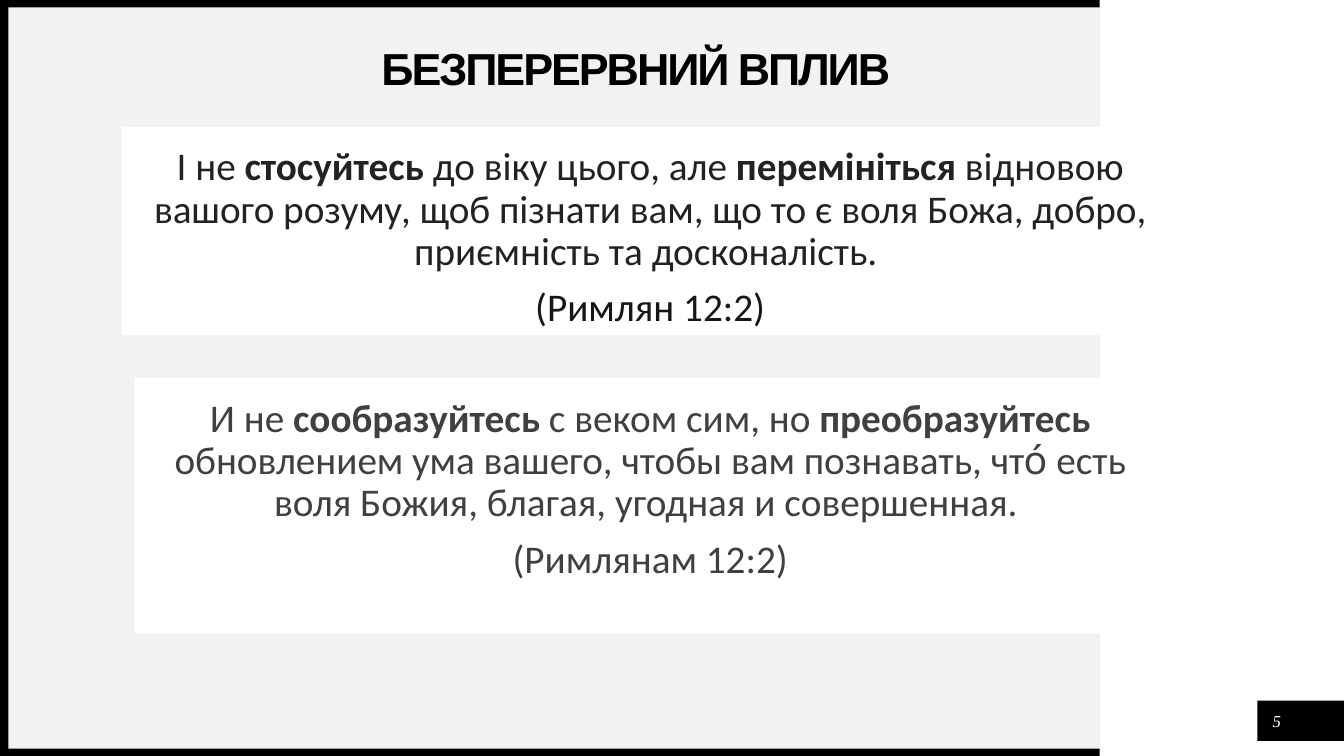
import pptx
import pptx.dml.color
import pptx.enum.shapes
import pptx.enum.text
import pptx.oxml
import pptx.oxml.ns
import pptx.util

# The slide is a grid of 160 columns by 90 rows
CELL = pptx.util.Inches(1 / 12)
COLUMNS, ROWS = 160, 90
PANEL_RIGHT = 130.9
BAR = 0.88

ALIGN = pptx.enum.text.PP_ALIGN
ANCHOR = pptx.enum.text.MSO_ANCHOR

# Each verse: paragraphs of (text, bold, colour) runs
UKRAINIAN_VERSE = [
    [("І не ", False, "222222"),
     ("стосуйтесь", True, "222222"),
     (" до віку цього, але ", False, "222222"),
     ("перемініться", True, "222222"),
     (" відновою вашого розуму, щоб пізнати вам, що то є воля Божа, "
      "добро, приємність та досконалість. ", False, "222222")],
    [("(Римлян 12:2)", False, "161616")],
]
RUSSIAN_VERSE = [
    [("И не ", False, "404040"),
     ("сообразуйтесь", True, "404040"),
     (" с веком сим, но ", False, "404040"),
     ("преобразуйтесь", True, "404040"),
     (" обновлением ума вашего, чтобы вам познавать, что́ есть "
      "воля Божия, благая, угодная и совершенная. ", False, "404040")],
    [("(Римлянам 12:2)", False, "404040")],
]


def cells(*counts):
    return [round(count * CELL) for count in counts]


def paint(target, colour):
    """Give a fill or a font a solid colour."""
    if hasattr(target, "solid"):
        target.solid()
        target = target.fore_color
    else:
        target = target.color
    target.rgb = pptx.dml.color.RGBColor.from_string(colour)


def add_block(page, area, colour):
    block = page.shapes.add_shape(
        pptx.enum.shapes.MSO_SHAPE.RECTANGLE, *cells(*area))
    block.shadow.inherit = False
    paint(block.fill, colour)
    block.line.fill.background()


def place(page, box, area):
    """Move a placeholder to its area, in front of the blocks."""
    box.left, box.top, box.width, box.height = cells(*area)
    page.shapes._spTree.append(box._element)


def set_frame(box, insets=(0, 0, 0, 0), anchor=ANCHOR.TOP):
    frame = box.text_frame
    frame.word_wrap = True
    frame.auto_size = pptx.enum.text.MSO_AUTO_SIZE.NONE
    frame.vertical_anchor = anchor
    (frame.margin_left, frame.margin_top,
     frame.margin_right, frame.margin_bottom) = cells(*insets)
    return frame


def center_para(para, line_spacing=None, before=0):
    para.alignment = ALIGN.CENTER
    para.line_spacing = line_spacing
    para.space_before = pptx.util.Pt(before)
    para.space_after = pptx.util.Pt(0)


def add_span(para, text, font, size, colour, bold=False, italic=False, spacing=0):
    span = para.add_run()
    span.text = text
    span.font.name = font
    span.font.size = pptx.util.Pt(size)
    span.font.bold = bold
    span.font.italic = italic
    paint(span.font, colour)
    if spacing:
        span.font._element.set("spc", str(round(spacing * 100)))


def remove_bullet(para):
    properties = para._p.get_or_add_pPr()
    properties.set("marL", "0")
    properties.set("indent", "0")
    properties.append(pptx.oxml.parse_xml(
        "<a:buNone %s/>" % pptx.oxml.ns.nsdecls("a")))


def write_verse(box, verse):
    paint(box.fill, "FFFFFF")
    frame = set_frame(box, (2.4, 2.4, 2.4, 0))
    for number, spans in enumerate(verse):
        para = frame.add_paragraph() if number else frame.paragraphs[0]
        center_para(para, 0.9, 10)
        remove_bullet(para)
        for text, bold, colour in spans:
            add_span(para, text, "Calibri", 28, colour, bold)


def main():
    deck = pptx.Presentation()
    deck.slide_width, deck.slide_height = cells(COLUMNS, ROWS)
    page = deck.slides.add_slide(deck.slide_layouts[1])

    # Grey panel, black frame bars and page number block
    add_block(page, (1, BAR, 130, ROWS - 2 * BAR), "F2F2F2")
    add_block(page, (149.7, 83.4, 10.3, 4.8), "000000")
    for top in (0, ROWS - BAR):
        add_block(page, (0, top, PANEL_RIGHT, BAR), "000000")
    add_block(page, (0, 0, 1, ROWS), "000000")

    # Title
    title = page.shapes.title
    place(page, title, (2.5, 5.6, 146.4, 5.6))
    para = set_frame(title, anchor=ANCHOR.MIDDLE).paragraphs[0]
    center_para(para, 0.9)
    add_span(para, "БЕЗПЕРЕРВНИЙ ВПЛИВ", "Arial", 32, "000000", True, spacing=-1.5)

    # Verses
    body = page.placeholders[1]
    place(page, body, (14.5, 15.1, 125.8, 24.8))
    write_verse(body, UKRAINIAN_VERSE)
    write_verse(page.shapes.add_textbox(*cells(16, 45, 122.8, 30.4)), RUSSIAN_VERSE)

    # Page number
    number_box = page.shapes.add_textbox(*cells(150.2, 84, 3.6, 3.6))
    para = set_frame(number_box, anchor=ANCHOR.MIDDLE).paragraphs[0]
    center_para(para)
    add_span(para, "5", "Times New Roman", 12, "FFFFFF", italic=True)

    deck.save("out.pptx")


if __name__ == "__main__":
    main()
